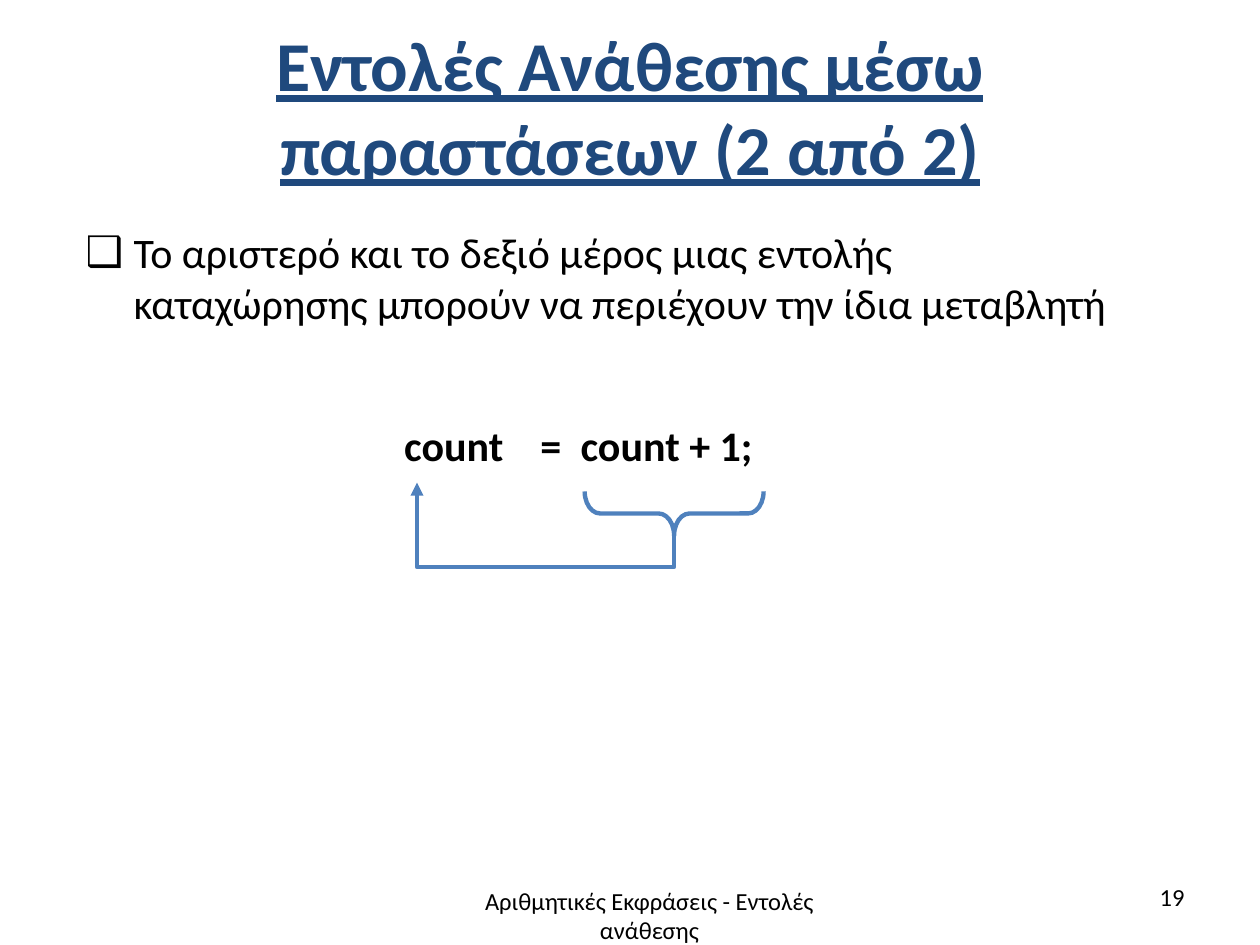
from pptx import Presentation
from pptx.dml.color import RGBColor
from pptx.enum.shapes import MSO_SHAPE as SHAPE
from pptx.enum.text import MSO_ANCHOR as ANCHOR, MSO_AUTO_SIZE as FIT, PP_ALIGN as ALIGN
from pptx.oxml.ns import qn
from pptx.util import Inches, Pt
from lxml.etree import SubElement

COLORS = {"title": "1F497D", "text": "000000", "line": "4F81BD"}
FONT = "Calibri"


def place(sp, left, top, width, height):
    sp.left, sp.top = Inches(left), Inches(top)
    sp.width, sp.height = Inches(width), Inches(height)


def write(sp, text, size, color="text", align=ALIGN.LEFT, bold=False, underline=False):
    tf = sp.text_frame
    tf.word_wrap = True
    tf.auto_size = FIT.NONE
    tf.text = text
    p = tf.paragraphs[0]
    p.alignment = align
    for r in p.runs:
        r.font.name, r.font.size = FONT, Pt(size)
        r.font.bold, r.font.underline = bold, underline
        r.font.color.rgb = RGBColor.from_string(COLORS[color])
    return p


def add_text(slide, box, text, size, **style):
    sp = slide.shapes.add_textbox(*map(Inches, box))
    return write(sp, text, size, **style)


def set_bullet(p, char, indent):
    pPr = p._p.get_or_add_pPr()
    pPr.set("marL", str(Inches(indent)))
    pPr.set("indent", str(-Inches(indent)))
    SubElement(pPr, qn("a:buFont")).set("typeface", FONT)
    SubElement(pPr, qn("a:buChar")).set("char", char)


def set_tabs(p, stops):
    tabs = SubElement(p._p.get_or_add_pPr(), qn("a:tabLst"))
    for stop in stops:
        tab = SubElement(tabs, qn("a:tab"))
        tab.set("pos", str(Inches(stop)))
        tab.set("algn", "l")


def style_outline(sp):
    sp.shadow.inherit = False
    sp.fill.background()
    sp.line.color.rgb = RGBColor.from_string(COLORS["line"])
    sp.line.width = Pt(2.5)


def add_brace(slide, left, top, width, height):
    # A left brace turned so that its point faces down
    x, y = left + (width - height) / 2, top + (height - width) / 2
    sp = slide.shapes.add_shape(SHAPE.LEFT_BRACE, Inches(x), Inches(y),
                                Inches(height), Inches(width))
    sp.rotation = 270
    sp.adjustments[0] = 0.35
    style_outline(sp)


def add_bent_arrow(slide, points):
    pts = [(Inches(x), Inches(y)) for x, y in points]
    builder = slide.shapes.build_freeform(*pts[0])
    builder.add_line_segments(pts[1:], close=False)
    sp = builder.convert_to_shape()
    style_outline(sp)
    SubElement(sp.line._get_or_add_ln(), qn("a:tailEnd")).set("type", "triangle")


def main():
    prs = Presentation()
    prs.slide_width, prs.slide_height = Inches(10), Inches(7.5)
    slide = prs.slides.add_slide(prs.slide_layouts[1])
    title, body = slide.placeholders

    # Title and statement
    place(title, 0.5, 0.13, 9, 1.42)
    write(title, "Εντολές Ανάθεσης μέσω παραστάσεων (2 από 2)", 40,
          color="title", align=ALIGN.CENTER, bold=True, underline=True)
    title.text_frame.vertical_anchor = ANCHOR.MIDDLE

    place(body, 0.58, 1.75, 8.5, 1.14)
    p = write(body, "Το αριστερό και το δεξιό μέρος μιας εντολής καταχώρησης "
                    "μπορούν να περιέχουν την ίδια μεταβλητή", 24)
    p.space_before = Pt(12)
    set_bullet(p, "❑", 0.38)

    # Assignment, with the expression's value going back to the variable
    p = add_text(slide, (3.11, 3.28, 3.05, 0.5), "count\t=\tcount + 1;", 24, bold=True)
    set_tabs(p, (1.08, 1.4))
    add_brace(slide, 4.64, 3.9, 1.42, 0.35)
    add_bent_arrow(slide, [(5.35, 4.25), (5.35, 4.5), (3.31, 4.5), (3.31, 3.83)])

    # Footer and page number
    add_text(slide, (3.41, 6.98, 3.49, 0.55),
             "Αριθμητικές Εκφράσεις - Εντολές ανάθεσης", 14, align=ALIGN.CENTER)
    add_text(slide, (7.17, 6.95, 2.33, 0.4), "19", 14, align=ALIGN.RIGHT)

    prs.save("out.pptx")


if __name__ == "__main__":
    main()
